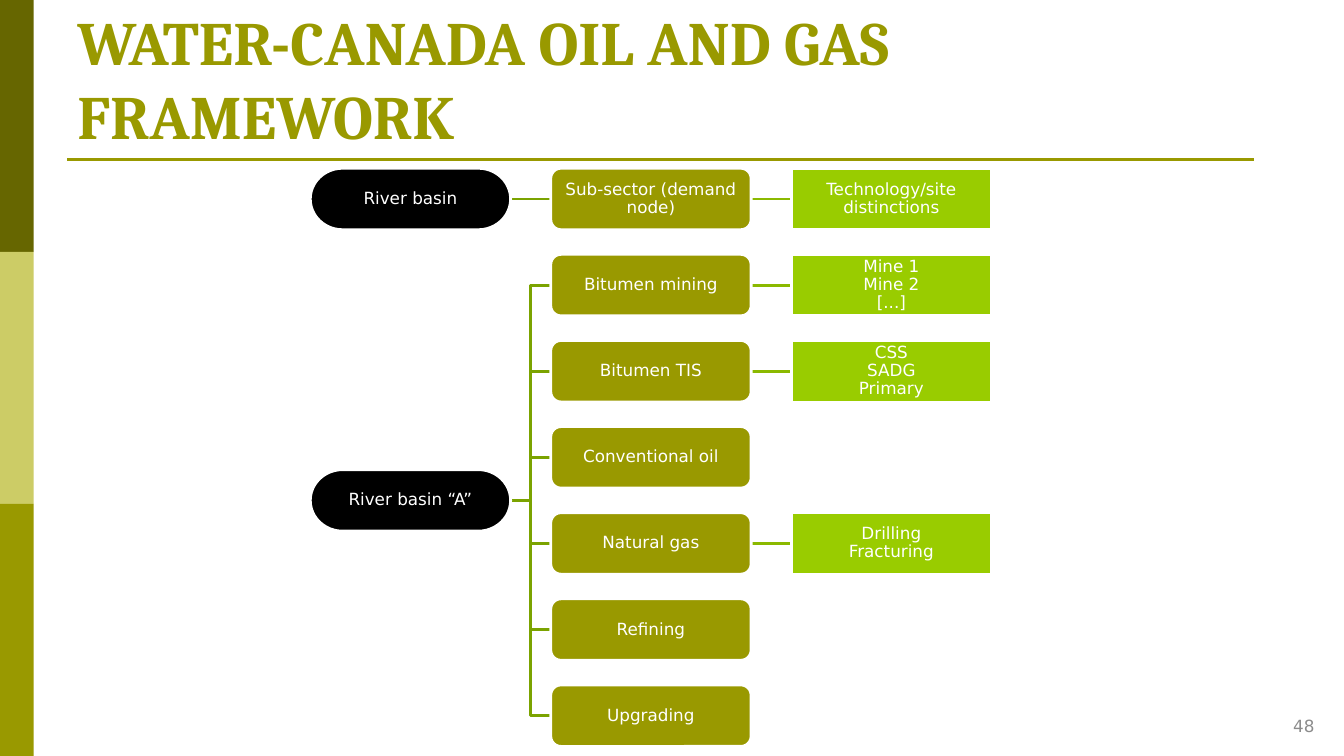
import pptx
import pptx.util
import pptx.dml.color
import pptx.enum.shapes
import pptx.enum.text
import pptx.oxml.ns
import lxml.etree

Cm, Pt = pptx.util.Cm, pptx.util.Pt
SHAPE = pptx.enum.shapes.MSO_SHAPE
LINK = pptx.enum.shapes.MSO_CONNECTOR
ALIGN = pptx.enum.text.PP_ALIGN
ANCHOR = pptx.enum.text.MSO_ANCHOR

# Content: each basin with its sub-sectors, each with its technologies
TITLE = ["WATER-CANADA OIL AND GAS", "FRAMEWORK"]
PAGE = "48"
BASINS = [
    ("River basin", [
        ("Sub-sector (demand node)", ["Technology/site distinctions"]),
    ]),
    ("River basin “A”", [
        ("Bitumen mining", ["Mine 1", "Mine 2", "[...]"]),
        ("Bitumen TIS", ["CSS", "SADG", "Primary"]),
        ("Conventional oil", []),
        ("Natural gas", ["Drilling", "Fracturing"]),
        ("Refining", []),
        ("Upgrading", []),
    ]),
]

COLORS = {
    "dark": "666600", "pale": "CCCC66", "olive": "999900",
    "basin": "000000", "technology": "99CC00", "white": "FFFFFF",
    "sector link": "7BA300", "technology link": "8BB900", "page": "8C8C8C",
}
# Tree columns: shape, fill colour
LEVELS = [
    (SHAPE.FLOWCHART_TERMINATOR, "basin"),
    (SHAPE.ROUNDED_RECTANGLE, "olive"),
    (SHAPE.RECTANGLE, "technology"),
]
TREE_LEFT, TREE_TOP = 7.82, 4.24
BOX_W, BOX_H = 5.05, 1.55
COL_STEP, ROW_STEP = 6.06, 2.17
LEFT_SITE, RIGHT_SITE = 1, 3

prs = pptx.Presentation()
prs.slide_width, prs.slide_height = Cm(33.87), Cm(19.05)
slide = prs.slides.add_slide(prs.slide_layouts[6])
shapes = slide.shapes


def rgb(name):
    return pptx.dml.color.RGBColor.from_string(COLORS[name])


def add_box(kind, left, top, width, height, fill):
    sp = shapes.add_shape(kind, Cm(left), Cm(top), Cm(width), Cm(height))
    sp.shadow.inherit = False
    sp.fill.solid()
    sp.fill.fore_color.rgb = rgb(fill)
    sp.line.fill.background()
    return sp


def write(sp, lines, font, size, color, align, anchor, bold=False):
    tf = sp.text_frame
    tf.word_wrap = True
    tf.vertical_anchor = anchor
    p = tf.paragraphs[0]
    p.alignment = align
    for i, line in enumerate(lines):
        if i:
            p.add_line_break()
        r = p.add_run()
        r.text = line
        r.font.name, r.font.size, r.font.bold = font, Pt(size), bold
        r.font.color.rgb = rgb(color)
    return tf


def add_line(kind, x1, y1, x2, y2, color, width):
    line = shapes.add_connector(kind, Cm(x1), Cm(y1), Cm(x2), Cm(y2))
    line.line.color.rgb = rgb(color)
    line.line.width = Pt(width)
    lxml.etree.SubElement(line._element.spPr, pptx.oxml.ns.qn("a:effectLst"))
    return line


def add_node(level, row, lines):
    kind, fill = LEVELS[level]
    sp = add_box(kind, TREE_LEFT + level * COL_STEP, TREE_TOP + row * ROW_STEP,
                 BOX_W, BOX_H, fill)
    sp.line.color.rgb = rgb("white")
    sp.line.width = Pt(2)
    tf = write(sp, lines, "DejaVu Sans", 12, "white", ALIGN.CENTER, ANCHOR.MIDDLE)
    tf.margin_left = tf.margin_right = tf.margin_top = tf.margin_bottom = Cm(0.03)
    tf.paragraphs[0].line_spacing = 0.9
    return sp


def link(parent, child, color):
    kind = LINK.STRAIGHT if parent.top == child.top else LINK.ELBOW
    line = add_line(kind, 0, 0, 1, 1, color, 2)
    line.begin_connect(parent, RIGHT_SITE)
    line.end_connect(child, LEFT_SITE)
    # Links lie behind the boxes
    shapes._spTree.insert(2, line._element)


# Side band and rule under the title
for i, band in enumerate(["dark", "pale", "olive"]):
    add_box(SHAPE.RECTANGLE, 0, i * 6.35, 0.85, 6.35, band)
add_line(LINK.STRAIGHT, 1.7, 4.02, 31.6, 4.02, "olive", 1.5)

# Title and page number
title = shapes.add_textbox(Cm(1.7), Cm(0.76), Cm(29.21), Cm(3.18))
write(title, TITLE, "Cambria", 44, "olive", ALIGN.LEFT, ANCHOR.BOTTOM, bold=True)
page = shapes.add_textbox(Cm(31.12), Cm(17.78), Cm(2.26), Cm(1.02))
write(page, [PAGE], "DejaVu Sans", 12, "page", ALIGN.RIGHT, ANCHOR.MIDDLE)

# Tree: each basin is centred on its sub-sectors
row = 0
for basin_name, sectors in BASINS:
    basin = add_node(0, row + (len(sectors) - 1) / 2, [basin_name])
    for sector_name, technologies in sectors:
        sector = add_node(1, row, [sector_name])
        link(basin, sector, "sector link")
        if technologies:
            link(sector, add_node(2, row, technologies), "technology link")
        row += 1

prs.save("out.pptx")
